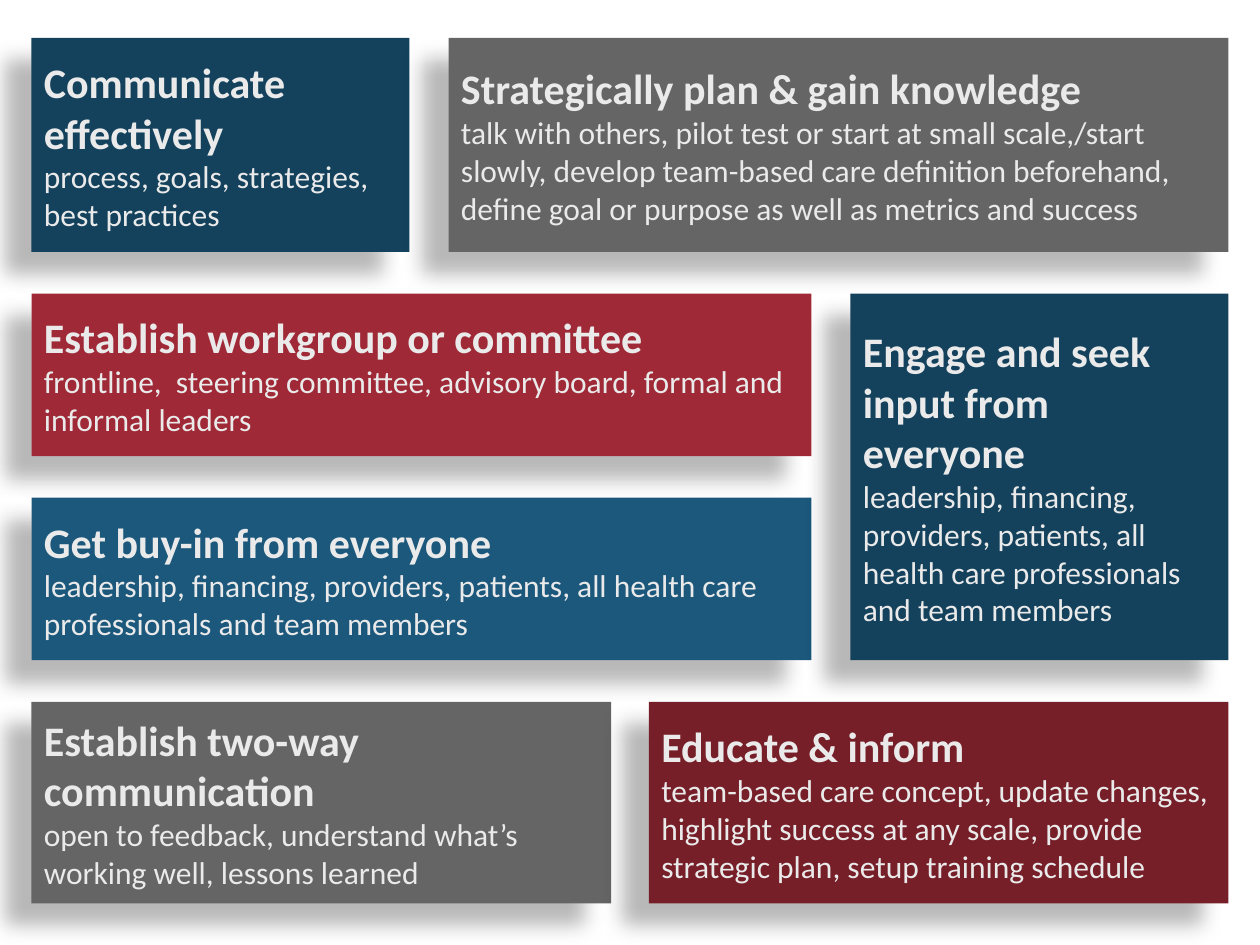
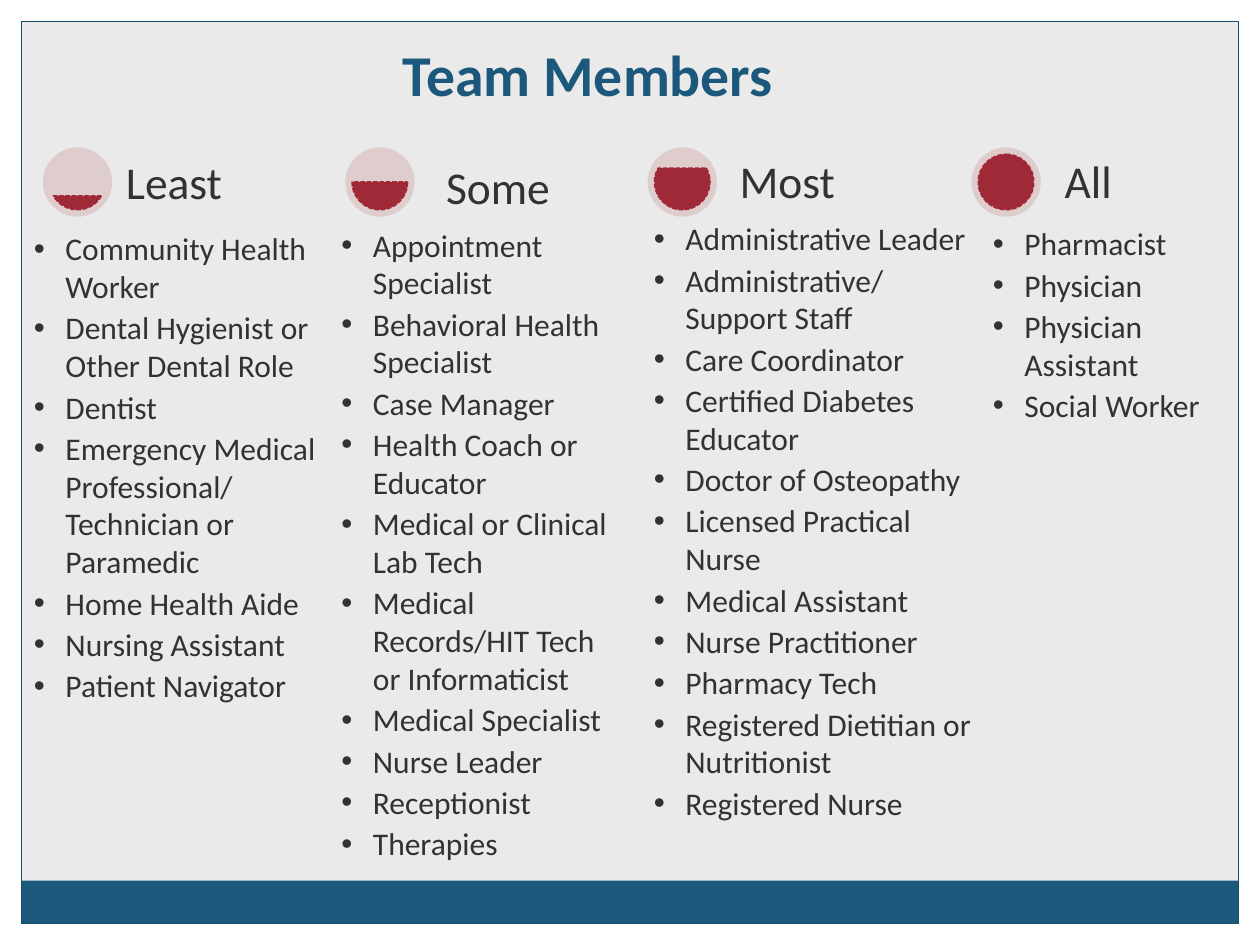
"""Builds two slides on team-based care: advice tiles and team members by involvement."""
from lxml.etree import SubElement
from pptx import Presentation
from pptx.dml.color import RGBColor
from pptx.enum.dml import MSO_LINE
from pptx.enum.shapes import MSO_SHAPE as Shape
from pptx.enum.text import MSO_ANCHOR as Anchor, MSO_AUTO_SIZE as AutoSize, PP_ALIGN as Align
from pptx.oxml.ns import qn
from pptx.util import Inches, Pt

COLORS = {
    "navy": "14425D", "blue": "1B587C", "border": "184E6D",
    "red": "9F2936", "wine": "771F28", "blush": "DFCDCE",
    "gray": "656565", "pale": "EAEAEA", "ink": "323232", "white": "FFFFFF",
}
FONT = "Calibri"
WIDTH, HEIGHT = 10, 7.5

MARGIN, TILE_TOP, ROW_GAP = 0.25, 0.3, 0.33
ROW_HEIGHTS = [1.7, 1.29, 1.29, 1.6]
SPANS = {"narrow": 3, "half": 4.6, "wide": 6.19}
EVERYONE = "leadership, financing, providers, patients, all health care professionals and team members"
# Fields: first row, row count, side, span, fill, heading, detail
TILES = [
    (2, 1, "left", "wide", "blue", "Get buy-in from everyone", EVERYONE),
    (1, 2, "right", "narrow", "navy", "Engage and seek input from everyone", EVERYONE),
    (0, 1, "left", "narrow", "navy", "Communicate effectively",
     "process, goals, strategies, best practices"),
    (3, 1, "left", "half", "gray", "Establish two-way communication",
     "open to feedback, understand what’s working well, lessons learned"),
    (0, 1, "right", "wide", "gray", "Strategically plan & gain knowledge",
     "talk with others, pilot test or start at small scale,/start slowly, develop "
     "team-based care definition beforehand, define goal or purpose as well as "
     "metrics and success"),
    (1, 1, "left", "wide", "red", "Establish workgroup or committee",
     "frontline,  steering committee, advisory board, formal and informal leaders"),
    (3, 1, "right", "half", "wine", "Educate & inform",
     "team-based care concept, update changes, highlight success at any scale, "
     "provide strategic plan, setup training schedule"),
]

TITLE = "Team Members"
EDGE = 0.17
DIAL_TOP, DIAL_SIZE, DIAL_INSET = 1.17, 0.55, 0.055
LIST_HEIGHT = 4.8
GROUPS = [
    {"label": "Least", "tilt": 30, "dial": 0.34, "label_at": (0.93, 1.18),
     "list_at": (0.25, 1.8), "list_width": 2.3, "inset": 0.02,
     "members": ["Community Health Worker", "Dental Hygienist or Other Dental Role",
                 "Dentist", "Emergency Medical Professional/ Technician or Paramedic",
                 "Home Health Aide", "Nursing Assistant", "Patient Navigator"]},
    {"label": "Some", "tilt": 0, "dial": 2.74, "label_at": (3.47, 1.22),
     "list_at": (2.69, 1.77), "list_width": 2.3, "inset": 0.02,
     "members": ["Appointment Specialist", "Behavioral Health Specialist", "Case Manager",
                 "Health Coach or Educator", "Medical or Clinical Lab Tech",
                 "Medical Records/HIT Tech or Informaticist", "Medical Specialist",
                 "Nurse Leader", "Receptionist", "Therapies"]},
    {"label": "Most", "tilt": -30, "dial": 5.14, "label_at": (5.8, 1.17),
     "list_at": (5.17, 1.72), "list_width": 2.65, "inset": 0.02,
     "members": ["Administrative Leader", "Administrative/ Support Staff", "Care Coordinator",
                 "Certified Diabetes Educator", "Doctor of Osteopathy",
                 "Licensed Practical Nurse", "Medical Assistant", "Nurse Practitioner",
                 "Pharmacy Tech", "Registered Dietitian or Nutritionist",
                 "Registered Nurse"]},
    {"label": "All", "tilt": -90, "dial": 7.71, "label_at": (8.38, 1.17),
     "list_at": (7.82, 1.72), "list_width": 2.08, "inset": 0.06,
     "members": ["Pharmacist", "Physician", "Physician Assistant", "Social Worker"]},
]


def rgb(name):
    return RGBColor.from_string(COLORS[name])


def add_shape(slide, kind, place, fill=None, line=None, weight=0.75):
    shape = slide.shapes.add_shape(kind, *map(Inches, place))
    shape.shadow.inherit = False
    if fill:
        shape.fill.solid()
        shape.fill.fore_color.rgb = rgb(fill)
    else:
        shape.fill.background()
    if line:
        shape.line.color.rgb = rgb(line)
        shape.line.width = Pt(weight)
    else:
        shape.line.fill.background()
    return shape


def set_frame(box, inset, anchor):
    frame = box.text_frame
    frame.word_wrap = True
    frame.auto_size = AutoSize.NONE
    frame.vertical_anchor = anchor
    frame.margin_left = frame.margin_right = Inches(inset)
    frame.margin_top = frame.margin_bottom = Inches(inset)
    return frame


def add_text(frame, text, size, color, bold=False, align=Align.LEFT,
             spacing=None, after=None, bullet=False):
    para = frame.paragraphs[0]
    if para.runs:
        para = frame.add_paragraph()
    para.alignment = align
    para.line_spacing = spacing
    para.space_after = after
    if bullet:
        props = para._p.get_or_add_pPr()
        props.set("marL", str(Inches(0.25)))
        props.set("indent", str(-Inches(0.25)))
        SubElement(props, qn("a:buFont"), typeface="Arial")
        SubElement(props, qn("a:buChar"), char="•")
    span = para.add_run()
    span.text = text
    span.font.name, span.font.size, span.font.bold = FONT, Pt(size), bold
    span.font.color.rgb = rgb(color)


def cast_shadow(shape):
    effects = shape._element.spPr.find(qn("a:effectLst"))
    shadow = SubElement(effects, qn("a:outerShdw"), blurRad=str(Pt(11.8)),
                        dist=str(Pt(19.7)), dir=str(141 * 60000),
                        algn="tr", rotWithShape="0")
    color = SubElement(shadow, qn("a:srgbClr"), val="000000")
    SubElement(color, qn("a:alpha"), val="28000")


def set_background(slide, color):
    slide.background.fill.solid()
    slide.background.fill.fore_color.rgb = rgb(color)


def build_tiles(deck):
    slide = deck.slides.add_slide(deck.slide_layouts[6])
    set_background(slide, "white")
    for row, count, side, span, fill, heading, detail in TILES:
        width = SPANS[span]
        left = MARGIN if side == "left" else WIDTH - MARGIN - width
        top = TILE_TOP + sum(ROW_HEIGHTS[:row]) + row * ROW_GAP
        height = sum(ROW_HEIGHTS[row:row + count]) + (count - 1) * ROW_GAP
        tile = add_shape(slide, Shape.RECTANGLE, (left, top, width, height), fill)
        cast_shadow(tile)
        frame = set_frame(tile, 0.1, Anchor.MIDDLE)
        add_text(frame, heading, 24, "pale", bold=True)
        add_text(frame, detail, 18, "pale")


def add_page_frame(slide):
    for place in [(0, HEIGHT - EDGE, WIDTH, EDGE), (0, 0, WIDTH, EDGE),
                  (WIDTH - EDGE, 0, EDGE, HEIGHT), (0, 0, EDGE, HEIGHT)]:
        add_shape(slide, Shape.RECTANGLE, place, "white")
    inner = (EDGE, EDGE, WIDTH - 2 * EDGE, HEIGHT - 2 * EDGE)
    band_height = 2 * EDGE
    add_shape(slide, Shape.RECTANGLE,
              (EDGE, HEIGHT - EDGE - band_height, inner[2], band_height), "blue")
    add_shape(slide, Shape.RECTANGLE, inner, line="border")


def add_dial(slide, left, tilt):
    add_shape(slide, Shape.OVAL, (left, DIAL_TOP, DIAL_SIZE, DIAL_SIZE), "blush")
    size = DIAL_SIZE - 2 * DIAL_INSET
    level = add_shape(slide, Shape.CHORD,
                      (left + DIAL_INSET, DIAL_TOP + DIAL_INSET, size, size),
                      "red", line="red", weight=0.9)
    level.line.dash_style = MSO_LINE.SQUARE_DOT
    for index, degrees in enumerate((tilt % 360, 180 - tilt)):
        level.adjustments[index] = degrees * 0.6


def build_members(deck):
    slide = deck.slides.add_slide(deck.slide_layouts[5])
    set_background(slide, "pale")
    add_page_frame(slide)
    title = slide.shapes.title
    title.left, title.top, title.width, title.height = map(Inches, (0, 0.08, 9.33, 0.83))
    add_text(set_frame(title, 0.05, Anchor.BOTTOM), TITLE, 33, "blue",
             bold=True, align=Align.CENTER)
    for group in GROUPS:
        add_dial(slide, group["dial"], group["tilt"])
        place = (*group["list_at"], group["list_width"], LIST_HEIGHT)
        box = slide.shapes.add_textbox(*map(Inches, place))
        frame = set_frame(box, group["inset"], Anchor.TOP)
        for member in group["members"]:
            add_text(frame, member, 18, "ink", after=Pt(2), bullet=True)
        label = slide.shapes.add_textbox(*map(Inches, (*group["label_at"], 1.46, DIAL_SIZE)))
        add_text(set_frame(label, 0.07, Anchor.BOTTOM), group["label"], 26, "ink", spacing=0.9)


def main():
    deck = Presentation()
    deck.slide_width, deck.slide_height = Inches(WIDTH), Inches(HEIGHT)
    build_tiles(deck)
    build_members(deck)
    deck.save("out.pptx")


if __name__ == "__main__":
    main()
